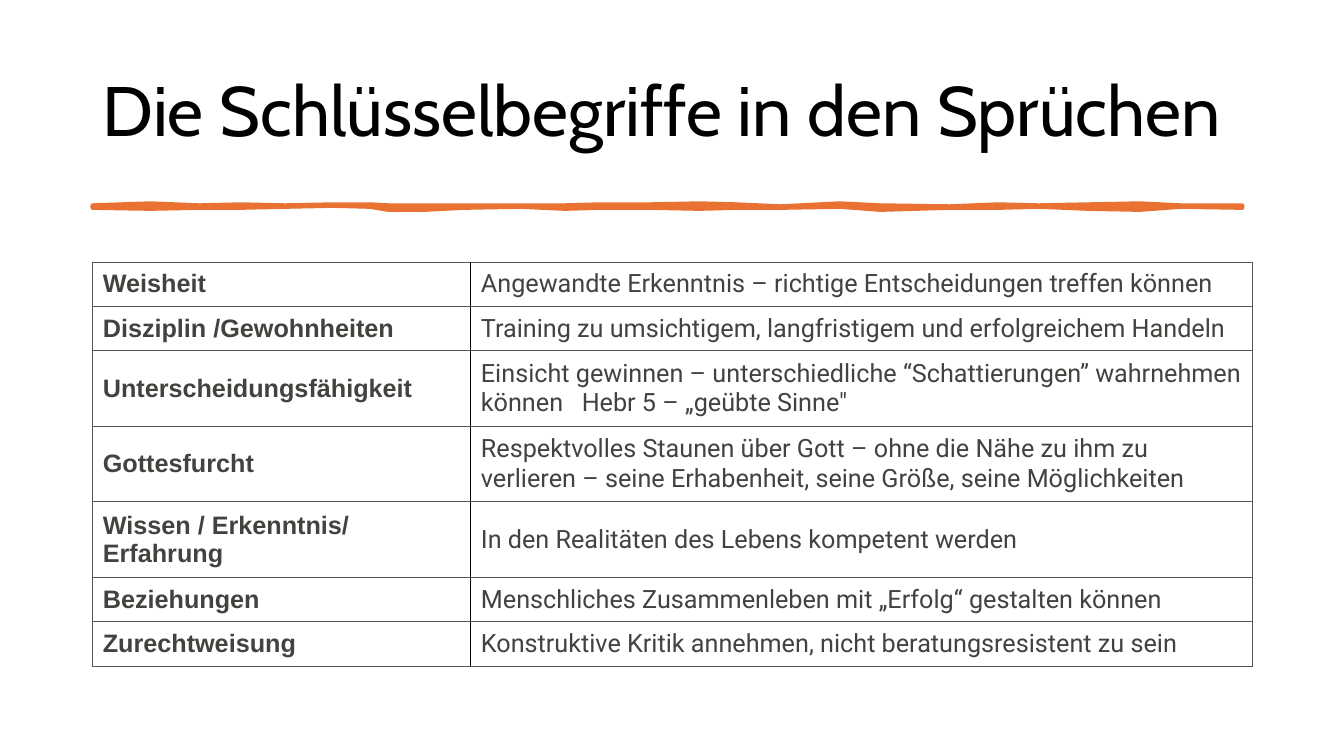
from lxml import etree
from pptx import Presentation
from pptx.dml.color import RGBColor
from pptx.enum import text
from pptx.oxml import ns
from pptx.util import Inches, Pt

BLACK = RGBColor(0x00, 0x00, 0x00)
ORANGE = RGBColor(0xE9, 0x71, 0x32)
DARK = RGBColor(0x42, 0x42, 0x3F)
GREY = RGBColor(0x56, 0x56, 0x56)

LEFT, WIDTH = 0.92, 11.5
COLUMNS = (3.75, 7.75)
ONE_LINE, TWO_LINES = 0.44, 0.75
TERMS = [
    ("Weisheit", "Angewandte Erkenntnis – richtige Entscheidungen treffen können", ONE_LINE),
    ("Disziplin /Gewohnheiten", "Training zu umsichtigem, langfristigem und erfolgreichem Handeln", ONE_LINE),
    ("Unterscheidungsfähigkeit",
     "Einsicht gewinnen – unterschiedliche “Schattierungen” wahrnehmen können\tHebr 5 – „geübte Sinne\"", TWO_LINES),
    ("Gottesfurcht",
     "Respektvolles Staunen über Gott – ohne die Nähe zu ihm zu verlieren – "
     "seine Erhabenheit, seine Größe, seine Möglichkeiten", TWO_LINES),
    ("Wissen / Erkenntnis/ Erfahrung", "In den Realitäten des Lebens kompetent werden", TWO_LINES),
    ("Beziehungen", "Menschliches Zusammenleben mit „Erfolg“ gestalten können", ONE_LINE),
    ("Zurechtweisung", "Konstruktive Kritik annehmen, nicht beratungsresistent zu sein", ONE_LINE),
]
STROKE = [
    (0.92, 2.04, 2.06), (1.49, 2.02, 2.07), (1.98, 2.04, 2.06), (2.38, 2.03, 2.06),
    (2.83, 2.04, 2.05), (3.3, 2.03, 2.04), (3.67, 2.03, 2.05), (3.85, 2.04, 2.08),
    (4.2, 2.04, 2.08), (4.6, 2.04, 2.06), (5.16, 2.04, 2.05), (5.6, 2.04, 2.07),
    (5.95, 2.03, 2.06), (6.45, 2.03, 2.06), (6.94, 2.02, 2.07), (7.3, 2.03, 2.06),
    (7.74, 2.05, 2.06), (8.33, 2.02, 2.05), (8.73, 2.04, 2.08), (9.42, 2.05, 2.06),
    (9.9, 2.03, 2.06), (10.3, 2.04, 2.05), (10.8, 2.03, 2.07), (11.3, 2.02, 2.08),
    (11.71, 2.04, 2.05), (12.32, 2.04, 2.06),
]


def style(p, font, size, color, bold=False):
    """Set the font of a whole paragraph."""
    f = p.font
    f.name, f.size, f.bold = font, Pt(size), bold
    f.color.rgb = color


def add_title(s, words):
    """Add the slide title."""
    tf = s.shapes.add_textbox(Inches(LEFT), Inches(0.4), Inches(WIDTH), Inches(1.45)).text_frame
    tf.word_wrap = True
    tf.vertical_anchor = text.MSO_ANCHOR.MIDDLE
    p = tf.paragraphs[0]
    p.text = words
    p.line_spacing = 0.9
    style(p, "Cabin", 50, BLACK)


def add_brush_stroke(s):
    """Draw the uneven orange rule below the title."""
    top = [(Inches(x), Inches(y)) for x, y, _ in STROKE]
    bottom = [(Inches(x), Inches(y)) for x, _, y in reversed(STROKE)]
    builder = s.shapes.build_freeform(*top[0])
    builder.add_line_segments(top[1:] + bottom, close=True)
    sp = builder.convert_to_shape()
    sp.shadow.inherit = False
    sp.fill.solid()
    sp.fill.fore_color.rgb = ORANGE
    sp.line.color.rgb = ORANGE
    sp.line.width = Pt(3.25)


def set_borders(cell, **colors):
    """Draw thin cell borders, keyed by side."""
    tc_pr = cell._tc.get_or_add_tcPr()
    for i, (side, color) in enumerate(colors.items()):
        ln = etree.Element(ns.qn(f"a:ln{side}"), w=str(Pt(0.75)))
        fill = etree.SubElement(ln, ns.qn("a:solidFill"))
        etree.SubElement(fill, ns.qn("a:srgbClr"), val=str(color))
        tc_pr.insert(i, ln)


def add_tab_stop(p, position):
    """Give a paragraph one left tab stop."""
    tabs = etree.SubElement(p._p.get_or_add_pPr(), ns.qn("a:tabLst"))
    etree.SubElement(tabs, ns.qn("a:tab"), pos=str(position), algn="l")


def fill_cell(cell, words, font, bold):
    """Write one table cell."""
    cell.fill.background()
    cell.vertical_anchor = text.MSO_ANCHOR.MIDDLE
    p = cell.text_frame.paragraphs[0]
    p.text = words
    if "\t" in words:
        add_tab_stop(p, Inches(1))
    style(p, font, 18, DARK, bold)


def add_terms_table(s):
    """Add the table of terms and their meanings."""
    height = sum(h for _, _, h in TERMS)
    table = s.shapes.add_table(len(TERMS), len(COLUMNS), Inches(LEFT), Inches(2.6),
                               Inches(WIDTH), Inches(height)).table
    table.first_row = table.horz_banding = False
    for column, width in zip(table.columns, COLUMNS):
        column.width = Inches(width)
    for row, (term, meaning, height) in zip(table.rows, TERMS):
        row.height = Inches(height)
        left, right = row.cells
        fill_cell(left, term, "Arial", True)
        fill_cell(right, meaning, "Roboto", False)
        set_borders(left, L=GREY, R=BLACK, T=GREY, B=GREY)
        set_borders(right, L=BLACK, R=GREY, T=GREY, B=GREY)


def main():
    """Build and save the slide."""
    prs = Presentation()
    prs.slide_width, prs.slide_height = Inches(13.33), Inches(7.5)
    s = prs.slides.add_slide(prs.slide_layouts[6])
    add_title(s, "Die Schlüsselbegriffe in den Sprüchen")
    add_brush_stroke(s)
    add_terms_table(s)
    prs.save("out.pptx")


if __name__ == "__main__":
    main()
